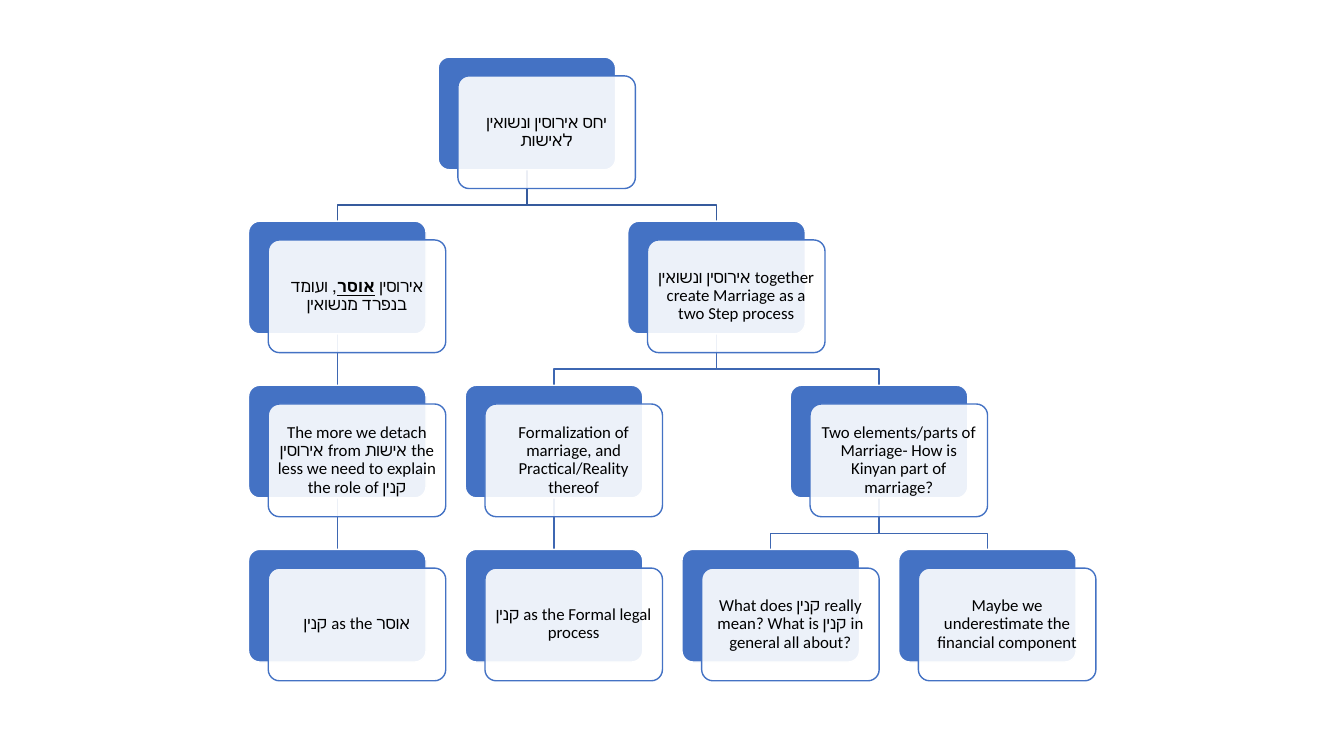
from dataclasses import dataclass
from itertools import count

from lxml.etree import SubElement
from pptx import Presentation
from pptx.dml.color import RGBColor
from pptx.enum.shapes import MSO_CONNECTOR, MSO_SHAPE
from pptx.enum.text import MSO_ANCHOR, PP_ALIGN
from pptx.oxml.ns import qn
from pptx.util import Pt


@dataclass(frozen=True)
class Theme:
    accent: RGBColor = RGBColor(0x44, 0x72, 0xC4)
    top_line: RGBColor = RGBColor(0x36, 0x5B, 0x9D)
    lower_line: RGBColor = RGBColor(0x3E, 0x67, 0xB2)
    white: RGBColor = RGBColor(0xFF, 0xFF, 0xFF)
    text: RGBColor = RGBColor(0, 0, 0)
    font: str = "Calibri"
    size: int = 12


@dataclass(frozen=True)
class Node:
    text: str
    children: tuple = ()


THEME = Theme()
LEFT, TOP = 177.5, 40.8
COLUMN_STEP, ROW_STEP = 154.8, 117.2
BOX_W, BOX_H = 126.8, 80.5
CARD_DX, CARD_DY = 14.1, 13.4
BEND_GAP = 11.5

TREE = Node("יחס אירוסין ונשואין לאישות", (
    Node("אירוסין *אוסר*, ועומד בנפרד מנשואין", (
        Node("The more we detach אירוסין from אישות the less we need to explain the role of קנין", (
            Node("קנין as the אוסר"),
        )),
    )),
    Node("אירוסין ונשואין together create Marriage as a two Step process", (
        Node("Formalization of marriage, and Practical/Reality thereof", (
            Node("קנין as the Formal legal process"),
        )),
        Node("Two elements/parts of Marriage- How is Kinyan part of marriage?", (
            Node("What does קנין really mean? What is קנין in general all about?"),
            Node("Maybe we underestimate the financial component"),
        )),
    )),
))


def add_box(s, x, y, fill, line):
    sp = s.shapes.add_shape(MSO_SHAPE.ROUNDED_RECTANGLE, Pt(x), Pt(y), Pt(BOX_W), Pt(BOX_H))
    sp.adjustments[0] = 0.1
    sp.shadow.inherit = False
    sp.fill.solid()
    sp.fill.fore_color.rgb = fill
    sp.line.color.rgb = line
    sp.line.width = Pt(1)
    return sp


def set_opacity(sp, percent):
    color = sp.element.spPr.find(qn("a:solidFill"))[0]
    SubElement(color, qn("a:alpha")).set("val", str(percent * 1000))


def write_text(sp, text):
    tf = sp.text_frame
    tf.word_wrap = True
    tf.vertical_anchor = MSO_ANCHOR.MIDDLE
    tf.margin_left = tf.margin_right = Pt(3.7)
    tf.margin_top = tf.margin_bottom = Pt(3.7)
    p = tf.paragraphs[0]
    p.alignment = PP_ALIGN.CENTER
    p.line_spacing = 0.9
    for i, piece in enumerate(text.split("*")):
        r = p.add_run()
        r.text = piece
        r.font.name = THEME.font
        r.font.size = Pt(THEME.size)
        r.font.color.rgb = THEME.text
        r.font.bold = r.font.underline = i % 2 == 1


def add_node(s, text, column, row):
    x, y = LEFT + column * COLUMN_STEP, TOP + row * ROW_STEP
    base = add_box(s, x, y, THEME.accent, THEME.white)
    card = add_box(s, x + CARD_DX, y + CARD_DY, THEME.white, THEME.accent)
    set_opacity(card, 90)
    write_text(card, text)
    return base


def add_straight_edge(s, parent, child):
    edge = s.shapes.add_connector(MSO_CONNECTOR.STRAIGHT, 0, 0, 0, 0)
    edge.begin_connect(parent, 2)
    edge.end_connect(child, 0)
    return edge


def add_bent_edge(s, parent, child):
    x1, y1 = parent.left + parent.width // 2, parent.top + parent.height
    x2, y2 = child.left + child.width // 2, child.top
    bend = y2 - Pt(BEND_GAP)
    builder = s.shapes.build_freeform(x1, y1)
    builder.add_line_segments([(x1, bend), (x2, bend), (x2, y2)], close=False)
    edge = builder.convert_to_shape()
    edge.fill.background()
    return edge


def add_edge(s, parent, child, color):
    draw = add_straight_edge if parent.left == child.left else add_bent_edge
    edge = draw(s, parent, child)
    edge.line.color.rgb = color
    edge.line.width = Pt(1)
    SubElement(edge.element.spPr, qn("a:effectLst"))
    s.shapes.element.insert(2, edge.element)


def add_branch(s, node, leaf_columns, row=0):
    branches = [add_branch(s, child, leaf_columns, row + 1) for child in node.children]
    if branches:
        column = sum(c for c, _ in branches) / len(branches)
    else:
        column = next(leaf_columns)
    base = add_node(s, node.text, column, row)
    for _, child in branches:
        add_edge(s, base, child, THEME.lower_line if row else THEME.top_line)
    return column, base


def main():
    prs = Presentation()
    prs.slide_width, prs.slide_height = Pt(960), Pt(540)
    s = prs.slides.add_slide(prs.slide_layouts[6])
    add_branch(s, TREE, count())
    prs.save("out.pptx")


if __name__ == "__main__":
    main()
